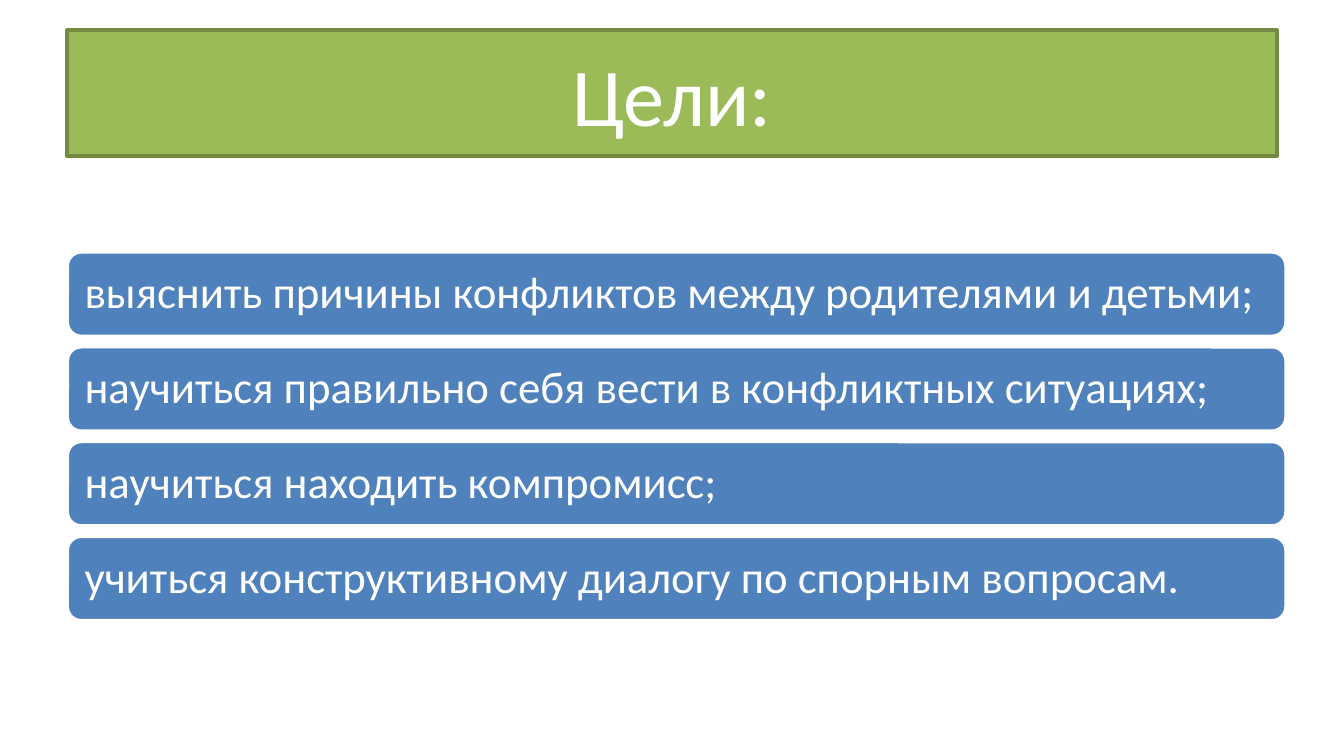
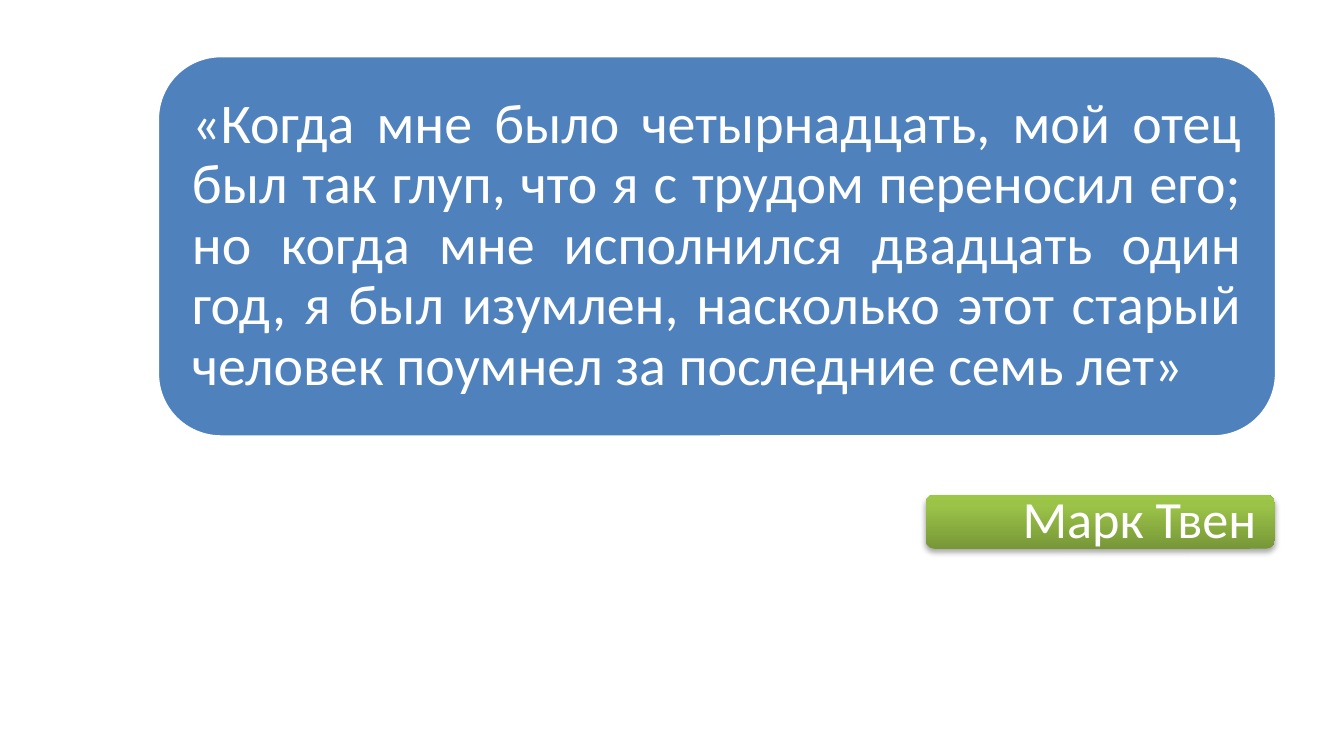
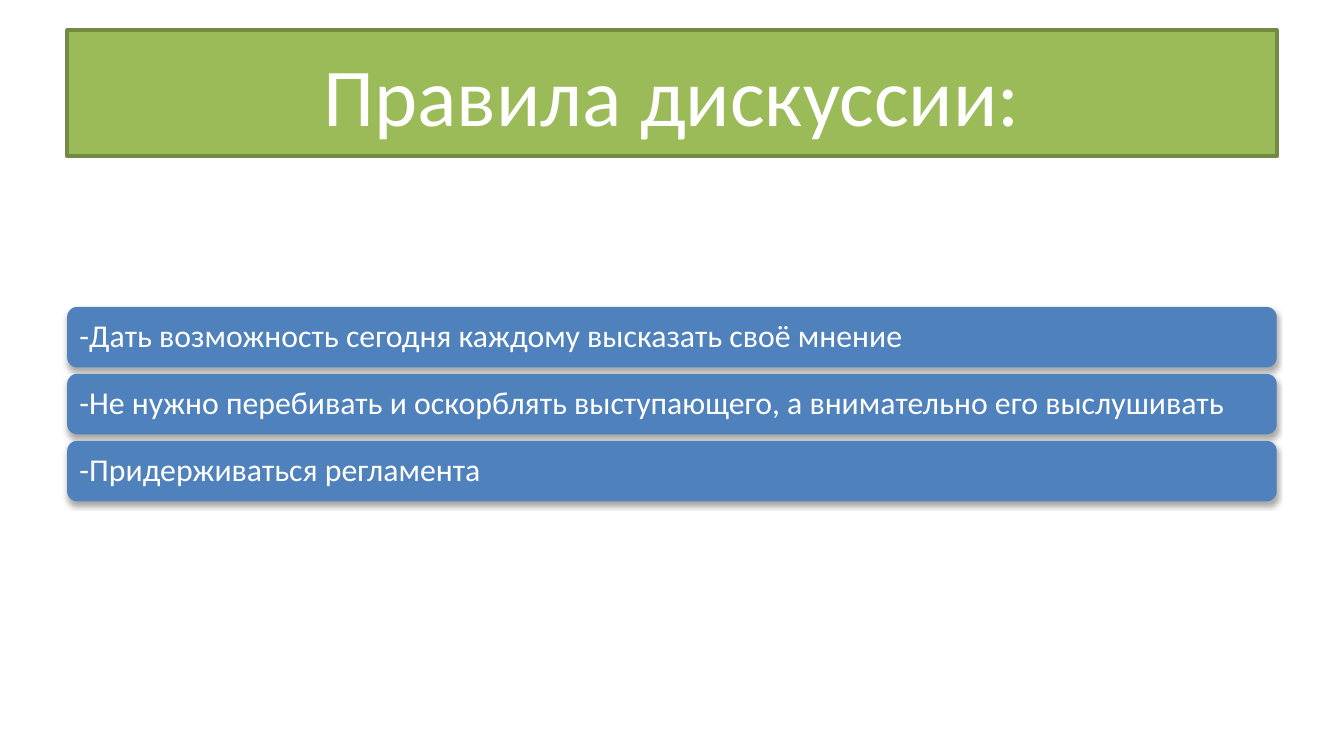
from copy import deepcopy

from lxml import etree
from pptx import Presentation
from pptx import util as u
from pptx.dml.color import RGBColor
from pptx.enum import shapes, text
from pptx.oxml.ns import qn

CELL = u.Inches(0.1)  # all places and sizes are counted in cells of this grid
COLS, ROWS = 100, 56.25
MARGIN = 5
FONT = "Calibri"
WHITE, BLUE, GREEN, DARK_GREEN = "FFFFFF", "4F81BD", "9BBB59", "738A42"
GREEN_FADE = [(0, "779737"), (0.8, "9BC348"), (1, "9DC746")]
TITLE_ONLY, BLANK = 5, 6


def rgb(color):
    return RGBColor.from_string(color)


def cells(*counts):
    return [round(n * CELL) for n in counts]


def fill_shape(sp, fill):
    """Fill with one colour, or upwards through a list of (position, colour)."""
    if isinstance(fill, str):
        sp.fill.solid()
        sp.fill.fore_color.rgb = rgb(fill)
        return
    sp.fill.gradient()
    sp.fill.gradient_angle = 90
    stops = next(sp.element.iter(qn("a:gsLst")))
    while len(stops) < len(fill):
        stops.append(deepcopy(stops[0]))
    for stop, (position, color) in zip(sp.fill.gradient_stops, fill):
        stop.position = position
        stop.color.rgb = rgb(color)


def outline(sp, color):
    if color is None:
        sp.line.fill.background()
    else:
        sp.line.color.rgb = rgb(color)
        sp.line.width = u.Pt(2)


def add_shadow(sp):
    effects = next(sp.element.iter(qn("a:effectLst")))
    shadow = etree.SubElement(
        effects, qn("a:outerShdw"), blurRad=str(u.Pt(3.1)),
        dist=str(u.Pt(1.8)), dir="5400000", rotWithShape="0")
    color = etree.SubElement(shadow, qn("a:srgbClr"), val="000000")
    etree.SubElement(color, qn("a:alpha"), val="35000")


def write(sp, words, size, align):
    tf = sp.text_frame
    tf.text = words
    tf.word_wrap = True
    tf.vertical_anchor = text.MSO_ANCHOR.MIDDLE
    p = tf.paragraphs[0]
    p.alignment = align
    p.font.name = FONT
    p.font.size = u.Pt(size)
    p.font.color.rgb = rgb(WHITE)
    return tf, p


def add_titled_slide(prs, title):
    slide = prs.slides.add_slide(prs.slide_layouts[TITLE_ONLY])
    sp = slide.shapes.title
    sp.left, sp.top, sp.width, sp.height = cells(
        MARGIN, 2.25, COLS - 2 * MARGIN, 9.38)
    fill_shape(sp, GREEN)
    outline(sp, DARK_GREEN)
    write(sp, title, 44, text.PP_ALIGN.CENTER)
    return slide


def add_card(slide, box, words, size, inset, fill=BLUE,
             align=text.PP_ALIGN.LEFT, shadow=False):
    """Rounded box with text; it has either a shadow or a white outline."""
    sp = slide.shapes.add_shape(
        shapes.MSO_SHAPE.ROUNDED_RECTANGLE, *cells(*box))
    sp.shadow.inherit = False
    fill_shape(sp, fill)
    outline(sp, None if shadow else WHITE)
    if shadow:
        add_shadow(sp)
    tf, p = write(sp, words, size, align)
    p.line_spacing = 0.9
    tf.margin_left = tf.margin_top = tf.margin_right = tf.margin_bottom = (
        u.Inches(inset))


def add_card_list(slide, items, top, bottom, width, height, **style):
    """Spread equal cards evenly from top to bottom."""
    step = (bottom - top - height) / (len(items) - 1)
    for i, item in enumerate(items):
        add_card(slide, (MARGIN, top + i * step, width, height), item, **style)


def main():
    prs = Presentation()
    prs.slide_width, prs.slide_height = cells(COLS, ROWS)

    goals = add_titled_slide(prs, "Цели:")
    add_card_list(goals, [
        "выяснить причины конфликтов между родителями и детьми;",
        "научиться правильно себя вести в конфликтных ситуациях;",
        "научиться находить компромисс;",
        "учиться конструктивному диалогу по спорным вопросам.",
    ], top=18.74, bottom=46.2, width=90.7, height=6.3, size=24, inset=0.1)

    quote = prs.slides.add_slide(prs.slide_layouts[BLANK])
    add_card(
        quote, (11.7, 4.13, 83.3, 28.4),
        "«Когда мне было четырнадцать, мой отец был так глуп, что я с трудом "
        "переносил его; но когда мне исполнился двадцать один год, я был "
        "изумлен, насколько этот старый человек поумнел за последние семь "
        "лет»", size=30, inset=0.12, align=text.PP_ALIGN.JUSTIFY)
    add_card(quote, (68.87, 36.8, 26, 4.04), "Марк Твен", size=28, inset=0.12,
             fill=GREEN_FADE, align=text.PP_ALIGN.RIGHT, shadow=True)

    rules = add_titled_slide(prs, "Правила дискуссии:")
    add_card_list(rules, [
        "-Дать возможность сегодня каждому высказать своё мнение",
        "-Не нужно перебивать и оскорблять выступающего, а внимательно его "
        "выслушивать",
        "-Придерживаться регламента",
    ], top=22.84, bottom=37.3, width=COLS - 2 * MARGIN, height=4.5, size=17,
        inset=0.07, shadow=True)

    prs.save("out.pptx")


if __name__ == "__main__":
    main()
